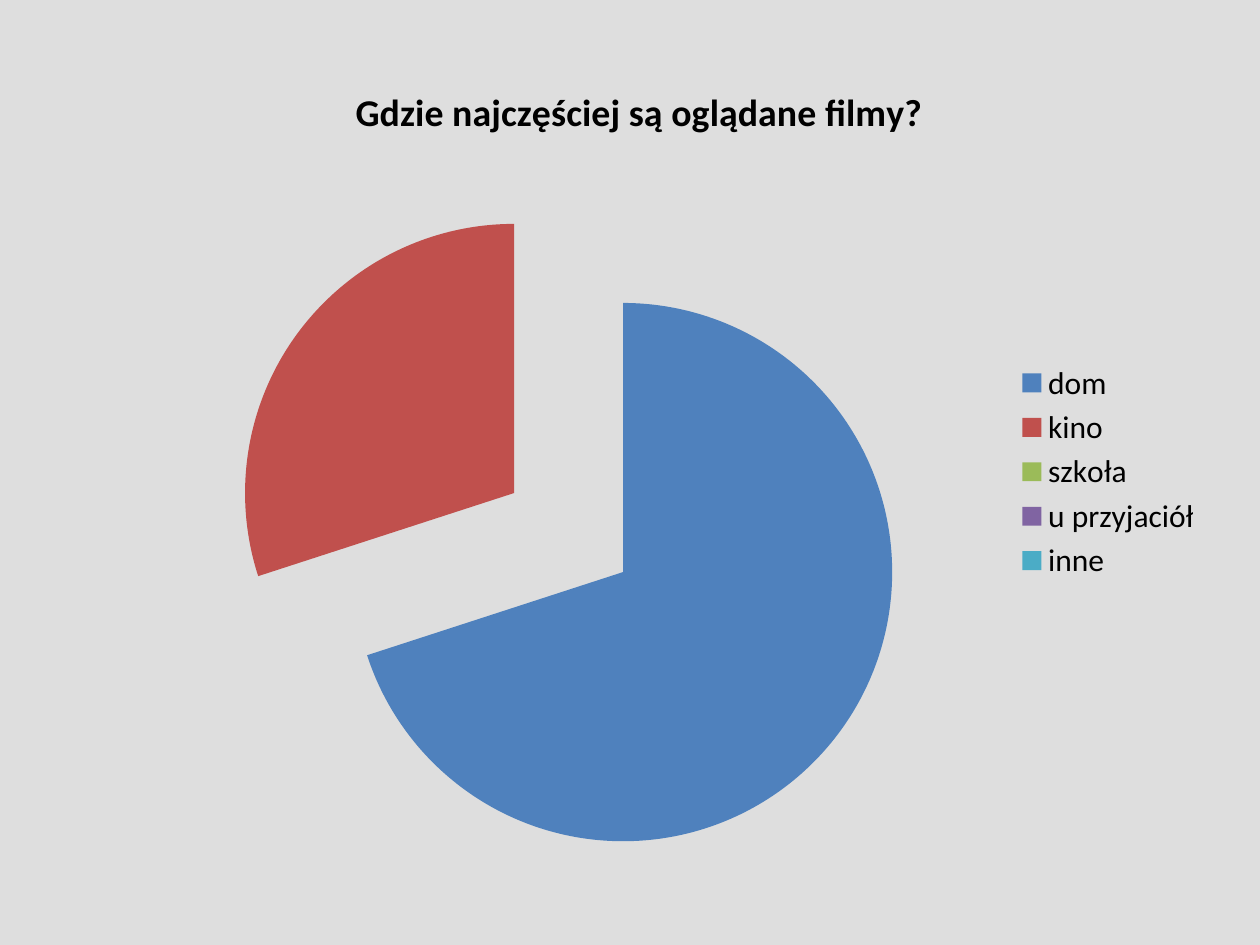
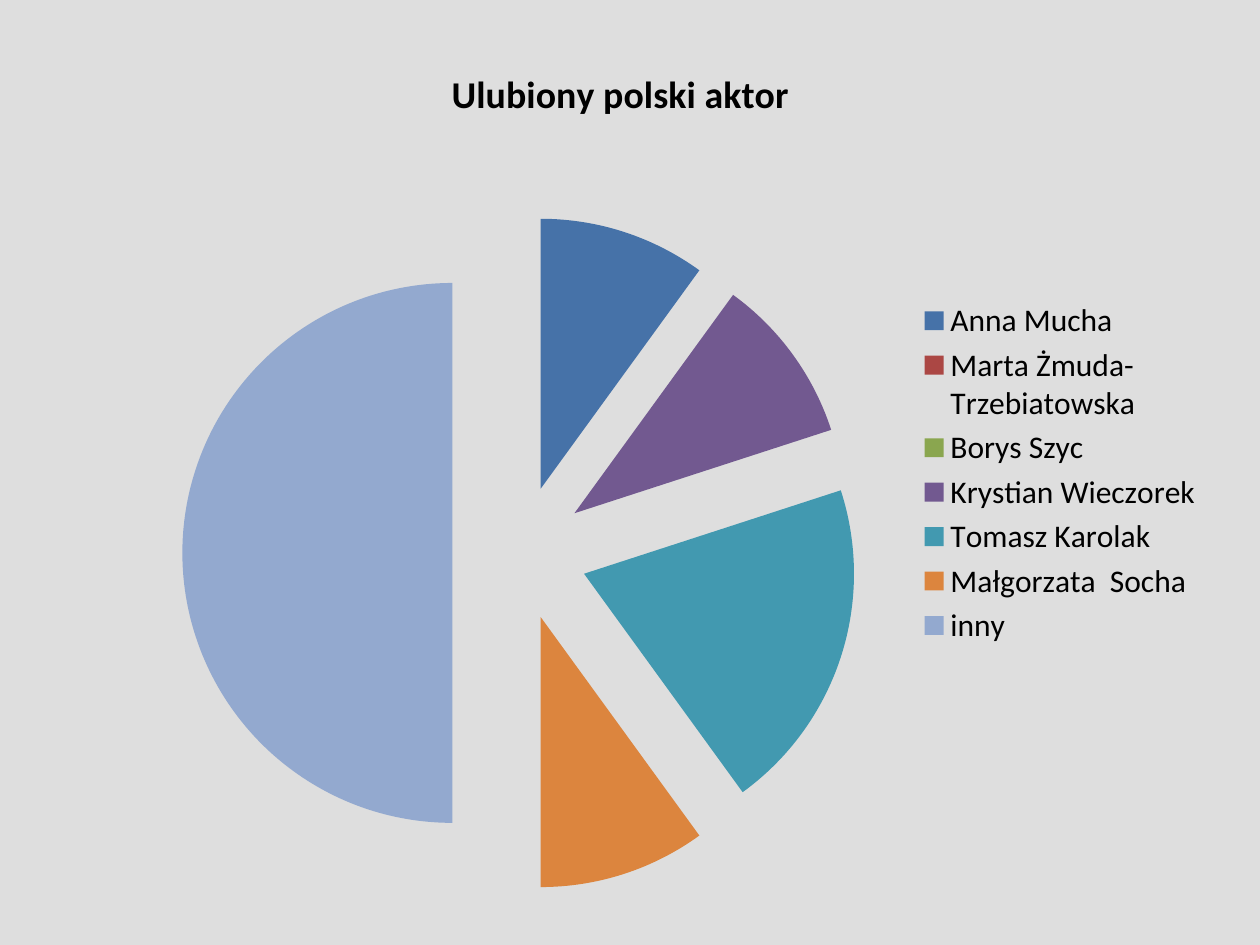
import pptx
import pptx.chart.data
import pptx.dml.color
import pptx.enum.chart
import pptx.util
from pptx.oxml import parse_xml
from pptx.oxml.ns import nsdecls

Pt = pptx.util.Pt
RGB = pptx.dml.color.RGBColor

# Shared look
BACKGROUND = RGB(0xDE, 0xDE, 0xDE)
BLACK = RGB(0, 0, 0)
BRIGHT = [RGB(0x4F, 0x81, 0xBD), RGB(0xC0, 0x50, 0x4D), RGB(0x9B, 0xBB, 0x59),
          RGB(0x80, 0x64, 0xA2), RGB(0x4B, 0xAC, 0xC6)]
MUTED = [RGB(0x46, 0x72, 0xA8), RGB(0xAB, 0x47, 0x44), RGB(0x8A, 0xA6, 0x4F),
         RGB(0x72, 0x59, 0x90), RGB(0x42, 0x99, 0xB0), RGB(0xDC, 0x85, 0x3E),
         RGB(0x93, 0xA9, 0xCF)]
TEXT = {"name": "Calibri", "size": Pt(18)}
TITLE = {"name": "Calibri", "size": Pt(21.6), "bold": True}
EXPLOSION = 25

# One survey question per slide; frame in points, plot as shares of the frame
SURVEYS = [
    {"title": "Gdzie najczęściej są oglądane filmy?",
     "answers": {"dom": 70, "kino": 30, "szkoła": 0, "u przyjaciół": 0, "inne": 0},
     "colours": BRIGHT,
     "frame": (36.72, 31.68, 657.36, 475.92),
     "plot": {"x": 0.146, "y": 0.169, "w": 0.585, "h": 0.808}},
    {"title": "Ulubiony polski aktor",
     "answers": {"Anna Mucha": 10, "Marta Żmuda-Trzebiatowska": 0, "Borys Szyc": 0,
                 "Krystian Wieczorek": 10, "Tomasz Karolak": 20,
                 "Małgorzata  Socha": 10, "inny": 50},
     "colours": MUTED,
     "frame": (14.4, 20.88, 680.4, 498.96),
     "plot": {"x": 0.132, "y": 0.205, "w": 0.567, "h": 0.773}},
]


def style(font, values):
    for name, value in values.items():
        setattr(font, name, value)
    font.color.rgb = BLACK


def place_plot(chart, plot):
    """Fix the inner plot area at the given shares of the chart frame."""
    area = chart._chartSpace.chart.plotArea
    for layout in area.findall(pptx.oxml.ns.qn("c:layout")):
        area.remove(layout)
    sides = "".join(f'<c:{side} val="{share}"/>' for side, share in plot.items())
    area.insert(0, parse_xml(
        f'<c:layout {nsdecls("c")}><c:manualLayout><c:layoutTarget val="inner"/>'
        f'<c:xMode val="edge"/><c:yMode val="edge"/>{sides}'
        '</c:manualLayout></c:layout>'))


deck = pptx.Presentation()
deck.slide_width, deck.slide_height = Pt(720), Pt(540)

# Grey background for every slide
background = deck.slide_master.background.fill
background.solid()
background.fore_color.rgb = BACKGROUND

for survey in SURVEYS:
    page = deck.slides.add_slide(deck.slide_layouts[6])

    # Pie chart
    data = pptx.chart.data.CategoryChartData()
    data.categories = list(survey["answers"])
    data.add_series("Series 1", list(survey["answers"].values()))
    chart = page.shapes.add_chart(
        pptx.enum.chart.XL_CHART_TYPE.PIE,
        *[Pt(length) for length in survey["frame"]], data).chart
    style(chart.font, TEXT)
    place_plot(chart, survey["plot"])

    # Title
    chart.has_title = True
    para = chart.chart_title.text_frame.paragraphs[0]
    span = para.add_run()
    span.text = survey["title"]
    style(span.font, TITLE)

    # Legend
    chart.has_legend = True
    chart.legend.position = pptx.enum.chart.XL_LEGEND_POSITION.RIGHT
    chart.legend.include_in_layout = False
    style(chart.legend.font, TEXT)

    # Slices
    chart.plots[0].vary_by_categories = True
    series = chart.plots[0].series[0]
    series.format.line.fill.background()
    series._element.spPr.addnext(
        parse_xml(f'<c:explosion {nsdecls("c")} val="{EXPLOSION}"/>'))
    for index, colour in enumerate(survey["colours"]):
        slice_format = series.points[index].format
        slice_format.fill.solid()
        slice_format.fill.fore_color.rgb = colour
        slice_format.line.fill.background()

deck.save("out.pptx")
